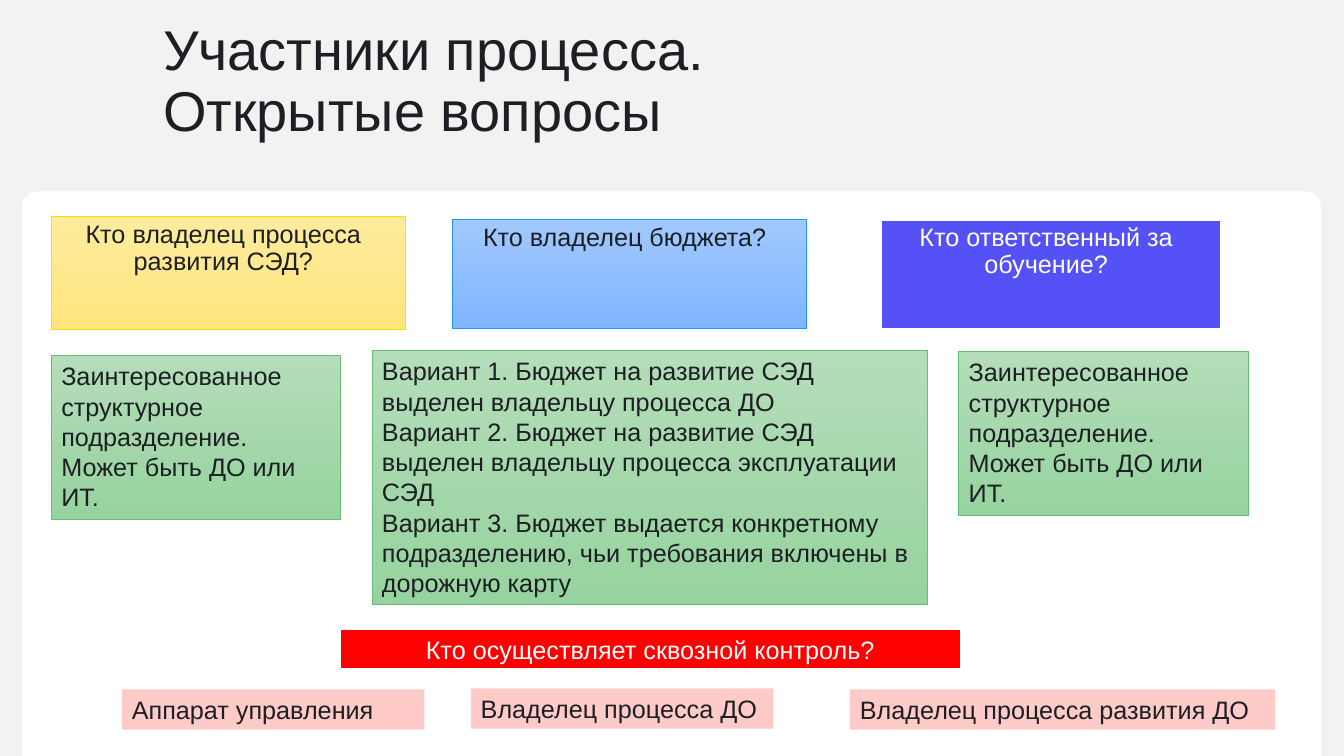
"""Builds a slide on process participants and the open questions about them."""
import pptx
import pptx.dml.color
import pptx.enum.shapes
import pptx.enum.text
import pptx.util

Inches, Pt = pptx.util.Inches, pptx.util.Pt
RGBColor = pptx.dml.color.RGBColor
SHAPE = pptx.enum.shapes.MSO_SHAPE
ANCHOR = pptx.enum.text.MSO_ANCHOR
ALIGN = pptx.enum.text.PP_ALIGN

FONT = "Arial"
INK = RGBColor(0x1C, 0x1F, 0x23)
WHITE = RGBColor(0xFF, 0xFF, 0xFF)
GREY = RGBColor(0xF2, 0xF2, 0xF2)
RED = RGBColor(0xFF, 0x00, 0x00)
PINK = RGBColor(0xFE, 0xCB, 0xC8)
VIOLET = RGBColor(0x54, 0x52, 0xF6)
YELLOW = (RGBColor(0xFF, 0xEB, 0x9E), RGBColor(0xFF, 0xE5, 0x7C))
YELLOW_LINE = RGBColor(0xFF, 0xDD, 0x00)
BLUE = (RGBColor(0xA1, 0xC8, 0xFD), RGBColor(0x7F, 0xB6, 0xFF))
BLUE_LINE = RGBColor(0x20, 0x97, 0xF6)
GREEN = (RGBColor(0xB4, 0xDD, 0xB9), RGBColor(0x97, 0xD3, 0x9F))
GREEN_LINE = RGBColor(0x65, 0xBF, 0x73)

TITLE = ["Участники процесса. ", "Открытые вопросы"]
QUESTIONS = [
    ("Кто владелец процесса развития СЭД?", (0.51, 2.15, 3.51, 1.12), YELLOW, YELLOW_LINE, 0.5, INK),
    ("Кто владелец бюджета?", (4.49, 2.18, 3.51, 1.08), BLUE, BLUE_LINE, 0.5, INK),
    ("Кто ответственный за обучение?", (8.74, 2.18, 3.37, 1.08), VIOLET, WHITE, 1.5, WHITE),
]
DEPARTMENT = ["Заинтересованное структурное подразделение. Может быть ДО или ИТ."]
BUDGET_OPTIONS = [
    "Вариант 1. Бюджет на развитие СЭД выделен владельцу процесса ДО",
    "Вариант 2. Бюджет на развитие СЭД выделен владельцу процесса эксплуатации СЭД",
    "Вариант 3. Бюджет выдается конкретному подразделению, чьи требования включены в дорожную карту",
]
ANSWERS = [
    (DEPARTMENT, (0.51, 3.53, 2.87, 1.62)),
    (BUDGET_OPTIONS, (3.69, 3.48, 5.51, 2.52)),
    (DEPARTMENT, (9.51, 3.49, 2.87, 1.62)),
]
CONTROL = "Кто осуществляет сквозной контроль?"
CONTROLLERS = [
    ("Аппарат управления", (1.21, 6.84, 3, 0.4), ANCHOR.TOP),
    ("Владелец процесса ДО", (4.67, 6.83, 3, 0.4), ANCHOR.TOP),
    ("Владелец процесса развития ДО", (8.43, 6.84, 4.22, 0.4), ANCHOR.MIDDLE),
]


def add_box(slide, box, fill, line=None, width=0.5, kind=SHAPE.RECTANGLE):
    sp = slide.shapes.add_shape(kind, *map(Inches, box))
    sp.shadow.inherit = False
    if isinstance(fill, tuple) and not isinstance(fill, RGBColor):
        sp.fill.gradient()
        sp.fill.gradient_angle = 270
        for stop, color in zip(sp.fill.gradient_stops, fill):
            stop.color.rgb = color
    else:
        sp.fill.solid()
        sp.fill.fore_color.rgb = fill
    if line is None:
        sp.line.fill.background()
    else:
        sp.line.color.rgb = line
        sp.line.width = Pt(width)
    return sp


def style_run(r, text, size, color):
    r.text = text
    r.font.name = FONT
    r.font.size = Pt(size)
    r.font.color.rgb = color


def write(sp, lines, color=INK, align=ALIGN.LEFT, anchor=ANCHOR.TOP, spacing=None):
    tf = sp.text_frame
    tf.word_wrap = True
    tf.vertical_anchor = anchor
    for i, line in enumerate(lines):
        p = tf.add_paragraph() if i else tf.paragraphs[0]
        p.alignment = align
        p.line_spacing = spacing
        style_run(p.add_run(), line, 18, color)


def add_title(slide):
    tf = slide.shapes.add_textbox(*map(Inches, (1.52, 0.35, 9.02, 0.94))).text_frame
    tf.word_wrap = True
    tf.vertical_anchor = ANCHOR.MIDDLE
    p = tf.paragraphs[0]
    p.line_spacing = 0.9
    for i, line in enumerate(TITLE):
        if i:
            p.add_line_break()
        style_run(p.add_run(), line, 40, INK)


def main():
    prs = pptx.Presentation()
    prs.slide_width, prs.slide_height = Inches(13.33), Inches(7.5)
    slide = prs.slides.add_slide(prs.slide_layouts[6])
    slide.background.fill.solid()
    slide.background.fill.fore_color.rgb = GREY

    card = add_box(slide, (0.22, 1.9, 12.88, 5.6), WHITE, kind=SHAPE.ROUND_2_SAME_RECTANGLE)
    card.adjustments[0] = 0.026
    add_title(slide)

    for text, box, fill, line, width, color in QUESTIONS:
        sp = add_box(slide, box, fill, line, width)
        sp.text_frame.margin_left = 0
        write(sp, [text], color, ALIGN.CENTER, spacing=0.9)
    for lines, box in ANSWERS:
        write(add_box(slide, box, GREEN, GREEN_LINE), lines)
    control = add_box(slide, (3.37, 6.24, 6.16, 0.4), RED, WHITE, 1.5)
    write(control, [CONTROL], WHITE, ALIGN.CENTER)
    for text, box, anchor in CONTROLLERS:
        write(add_box(slide, box, PINK), [text], anchor=anchor)

    prs.save("out.pptx")


if __name__ == "__main__":
    main()
